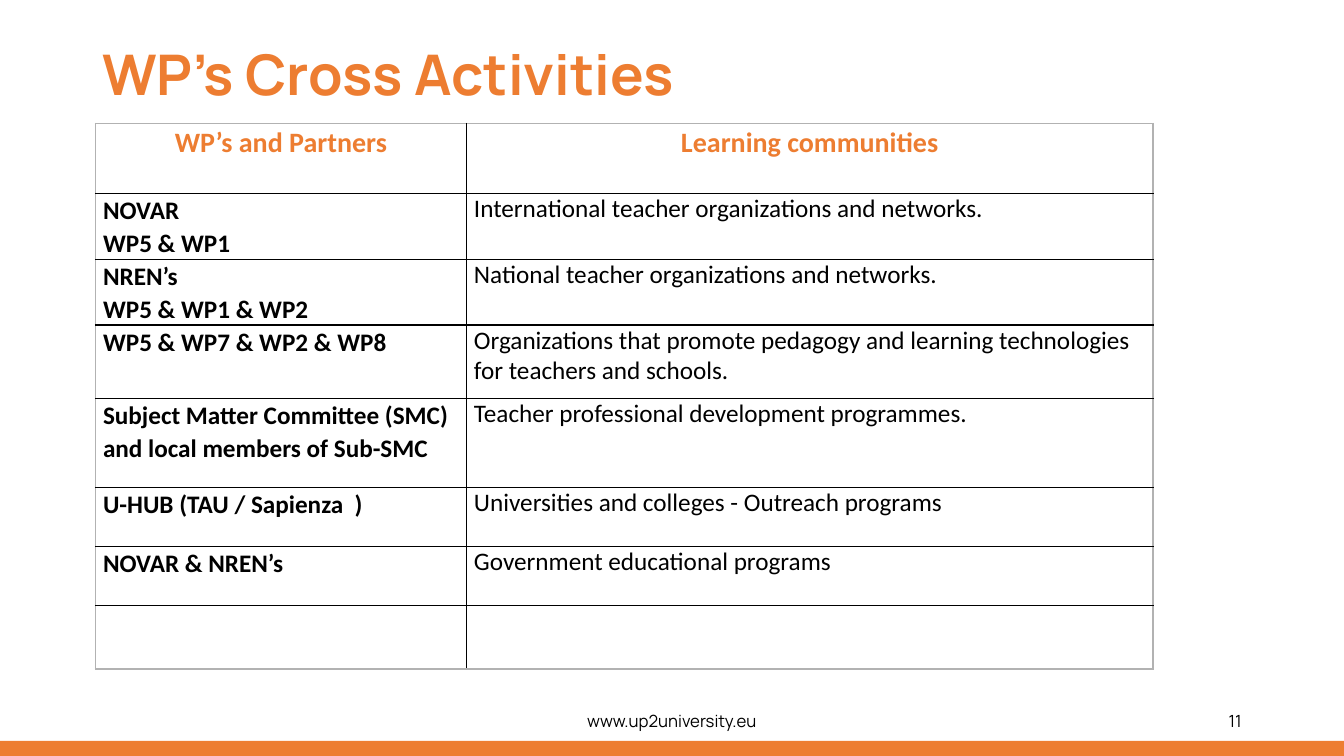
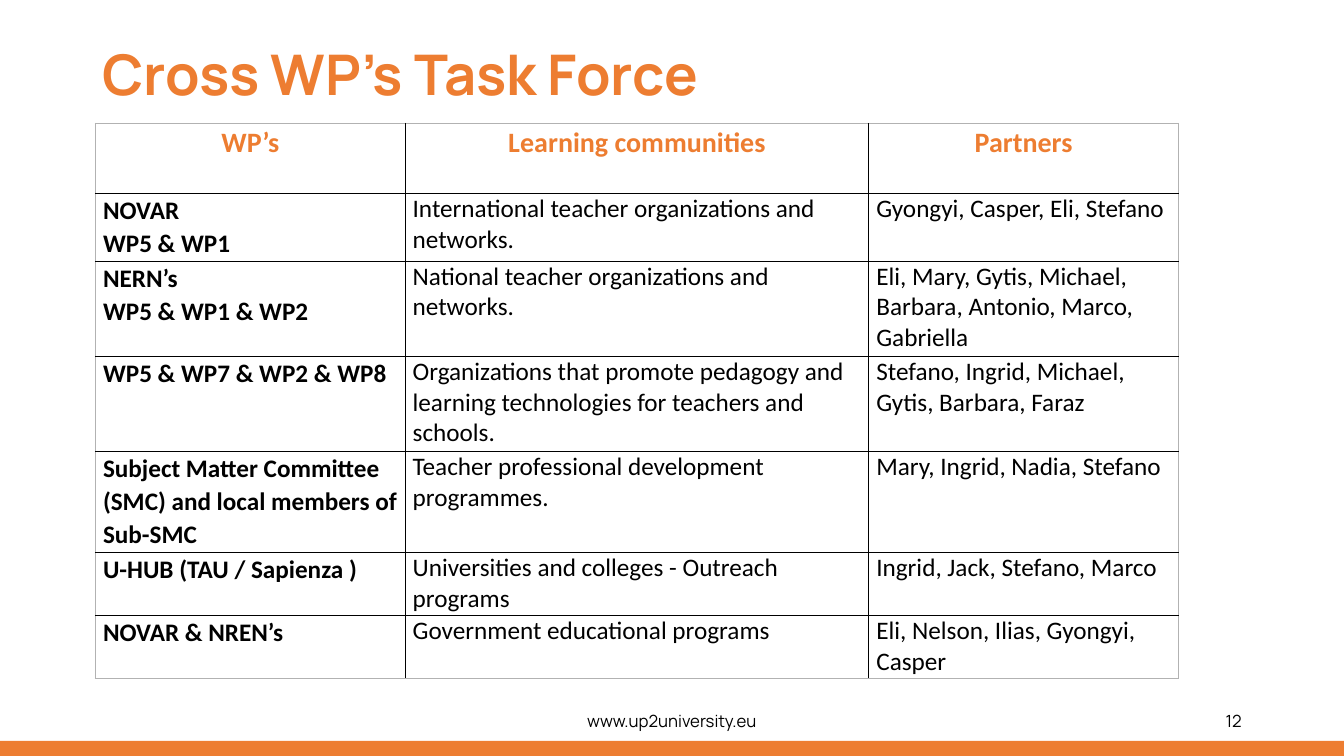
from dataclasses import dataclass
from lxml.etree import SubElement
from pptx import Presentation
from pptx.dml.color import RGBColor as RGB
from pptx.enum.shapes import MSO_SHAPE as Shape
from pptx.enum.text import MSO_ANCHOR as Anchor, PP_ALIGN as Align
from pptx.oxml.ns import qn
from pptx.util import Pt

# Content
SITE = "www.up2university.eu"
SLIDES = [
    dict(
        title="WP’s Cross Activities", page="11",
        cols=[264.96, 490.5],
        heights=[50, 47, 47, 52.5, 63.4, 42.2, 42.2, 45.4],
        rows=[
            ("WP’s and Partners", "Learning communities"),
            ("NOVAR\nWP5 & WP1",
             "International teacher organizations and networks."),
            ("NREN’s\nWP5 & WP1 & WP2",
             "National teacher organizations and networks."),
            ("WP5 & WP7 & WP2 & WP8",
             "Organizations that promote pedagogy and learning technologies "
             "for teachers and schools."),
            ("Subject Matter Committee (SMC) and local members of Sub-SMC",
             "Teacher professional development programmes."),
            ("U-HUB (TAU / Sapienza  )",
             "Universities and colleges - Outreach programs"),
            ("NOVAR & NREN’s", "Government educational programs"),
            ("", ""),
        ]),
    dict(
        title="Cross WP’s Task Force", page="12",
        cols=[221.2, 331.2, 221.2],
        heights=[50, 48.4, 68, 68, 72, 45.2, 45.2],
        rows=[
            ("WP’s", "Learning communities", "Partners"),
            ("NOVAR\nWP5 & WP1",
             "International teacher organizations and networks.",
             "Gyongyi, Casper, Eli, Stefano"),
            ("NERN’s\nWP5 & WP1 & WP2",
             "National teacher organizations and networks.",
             "Eli, Mary, Gytis, Michael, Barbara, Antonio, Marco, Gabriella"),
            ("WP5 & WP7 & WP2 & WP8",
             "Organizations that promote pedagogy and learning technologies "
             "for teachers and schools.",
             "Stefano, Ingrid, Michael, Gytis, Barbara, Faraz"),
            ("Subject Matter Committee (SMC) and local members of Sub-SMC",
             "Teacher professional development programmes.",
             "Mary, Ingrid, Nadia, Stefano"),
            ("U-HUB (TAU / Sapienza )",
             "Universities and colleges - Outreach programs",
             "Ingrid, Jack, Stefano, Marco"),
            ("NOVAR & NREN’s", "Government educational programs",
             "Eli, Nelson, Ilias, Gyongyi, Casper"),
        ]),
]


# Theme
@dataclass(frozen=True)
class Theme:
    accent: str = "ED7D31"
    ink: str = "000000"
    frame: str = "B2B2B2"
    display: str = "Manrope"
    body: str = "Calibri"
    title: int = 40
    head: int = 20
    text: int = 18
    foot: int = 12


T = Theme()
WIDE, HIGH = 960, 540
BAND = 10.8
LEFT, TOP = 68.2, 88.2


def style(frame, font, size, color, bold=False, align=Align.LEFT, gap=1.0):
    for para in frame.paragraphs:
        para.alignment, para.line_spacing = align, gap
        para.font.name, para.font.size = font, Pt(size)
        para.font.bold = bold
        para.font.color.rgb = RGB.from_string(color)
        for run in para.runs:
            run.font.name, run.font.size = font, Pt(size)


def label(slide, text, box, size, color, **look):
    frame = slide.shapes.add_textbox(*map(Pt, box)).text_frame
    frame.word_wrap = True
    frame.vertical_anchor = Anchor.MIDDLE
    frame.text = text
    style(frame, T.display, size, color, **look)


# Shared parts: band, title, footer
def base(deck, title, page):
    slide = deck.slides.add_slide(deck.slide_layouts[6])
    band = slide.shapes.add_shape(
        Shape.RECTANGLE, 0, Pt(HIGH - BAND), Pt(WIDE), Pt(BAND))
    band.shadow.inherit = False
    band.fill.solid()
    band.fill.fore_color.rgb = RGB.from_string(T.accent)
    band.line.fill.background()
    label(slide, title, (66, 19.4, 726, 72), T.title, T.accent,
          bold=True, gap=0.9)
    label(slide, SITE, (318, 500.4, 324, 28.8), T.foot, T.ink,
          align=Align.CENTER)
    label(slide, page, (678, 500.4, 216, 28.8), T.foot, T.ink,
          align=Align.RIGHT)
    return slide


# Table
def border(cell, edges):
    props = cell._tc.get_or_add_tcPr()
    for side, outer in edges.items():
        line = SubElement(props, qn(f"a:ln{side}"), w=str(Pt(1)))
        fill = SubElement(line, qn("a:solidFill"))
        SubElement(fill, qn("a:srgbClr"), val=T.frame if outer else T.ink)


def grid(slide, cols, heights, rows):
    table = slide.shapes.add_table(
        len(rows), len(cols), Pt(LEFT), Pt(TOP),
        Pt(sum(cols)), Pt(sum(heights))).table
    table.first_row = table.horz_banding = False
    for col, width in zip(table.columns, cols):
        col.width = Pt(width)
    for r, (row, height) in enumerate(zip(rows, heights)):
        table.rows[r].height = Pt(height)
        for c, text in enumerate(row):
            cell = table.cell(r, c)
            border(cell, dict(L=c == 0, R=c == len(cols) - 1,
                              T=r == 0, B=r == len(rows) - 1))
            cell.fill.background()
            cell.margin_left = cell.margin_right = Pt(5.4)
            cell.margin_top = cell.margin_bottom = 0
            cell.text_frame.text = text
            if r == 0:
                style(cell.text_frame, T.body, T.head, T.accent,
                      bold=True, align=Align.CENTER, gap=1.07)
            else:
                key = c == 0
                style(cell.text_frame, T.body, T.text, T.ink,
                      bold=key, gap=1.07 if key else 1.0)


def main():
    deck = Presentation()
    deck.slide_width, deck.slide_height = Pt(WIDE), Pt(HIGH)
    for item in SLIDES:
        slide = base(deck, item["title"], item["page"])
        grid(slide, item["cols"], item["heights"], item["rows"])
    deck.save("out.pptx")


if __name__ == "__main__":
    main()
